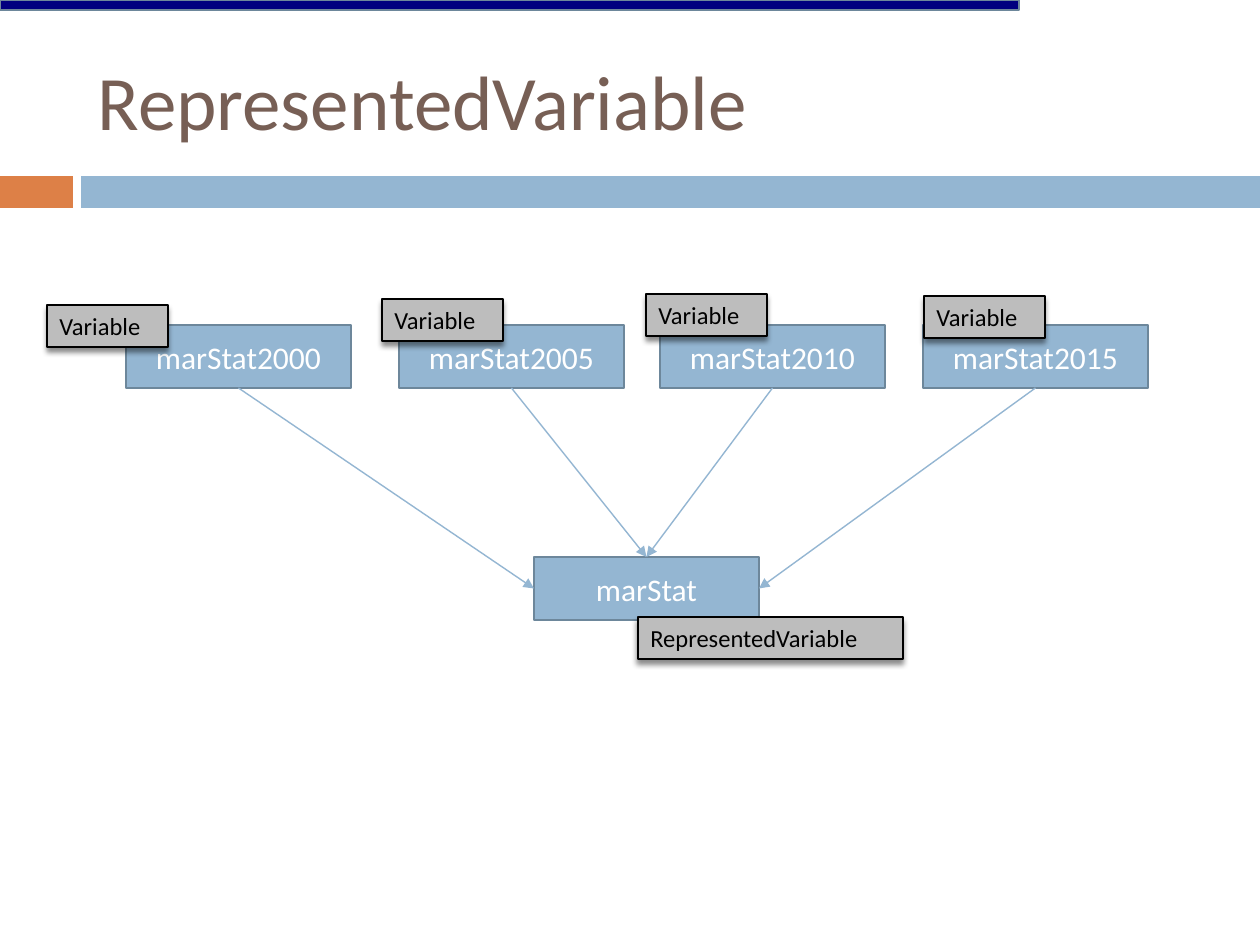
from lxml import etree
from pptx import Presentation
from pptx import util as u
from pptx.dml.color import RGBColor
from pptx.enum import shapes, text
from pptx.oxml import parse_xml
from pptx.oxml.ns import nsdecls, qn

PX = u.Inches(1) // 126
TOP, LEFT, BOTTOM, RIGHT = range(4)  # connection sites of a rectangle


def color(value):
    return RGBColor.from_string(value)


class Diagram:
    font = "Calibri"
    blue, edge, orange, navy = "94B6D2", "6D879B", "DD8047", "00007F"
    gray, black, white, brown = "BDBDBD", "000000", "FFFFFF", "775F55"

    def __init__(self, slide):
        self.slide = slide

    def set_text(self, shape, words, size, fill, align, anchor):
        frame = shape.text_frame
        frame.text = words
        frame.word_wrap = True
        frame.vertical_anchor = anchor
        paragraph = frame.paragraphs[0]
        paragraph.alignment = align
        paragraph.font.name = self.font
        paragraph.font.size = u.Pt(size)
        paragraph.font.color.rgb = color(fill)

    def title(self, words, left, top, width, height):
        shape = self.slide.shapes.title
        shape.left, shape.top = left * PX, top * PX
        shape.width, shape.height = width * PX, height * PX
        self.set_text(shape, words, 44, self.brown,
                      text.PP_ALIGN.LEFT, text.MSO_ANCHOR.MIDDLE)
        shape.text_frame.auto_size = text.MSO_AUTO_SIZE.NONE

    def bar(self, left, top, width, height, fill, line=None, weight=1.5):
        shape = self.slide.shapes.add_shape(
            shapes.MSO_SHAPE.RECTANGLE,
            left * PX, top * PX, width * PX, height * PX)
        shape.shadow.inherit = False
        shape.fill.solid()
        shape.fill.fore_color.rgb = color(fill)
        if line:
            shape.line.color.rgb = color(line)
            shape.line.width = u.Pt(weight)
        else:
            shape.line.fill.background()
        return shape

    def box(self, words, left, top):
        shape = self.bar(left, top, 225, 63, self.blue, self.edge)
        self.set_text(shape, words, 18, self.white,
                      text.PP_ALIGN.CENTER, text.MSO_ANCHOR.MIDDLE)
        return shape

    def label(self, words, left, top, width):
        shape = self.bar(left, top, width, 42, self.gray, self.black, 0.79)
        self.set_text(shape, words, 14, self.black,
                      text.PP_ALIGN.LEFT, text.MSO_ANCHOR.TOP)
        effects = shape._element.spPr.find(qn("a:effectLst"))
        effects.append(parse_xml(
            f'<a:outerShdw {nsdecls("a")} blurRad="{u.Pt(3)}" '
            f'dist="{u.Pt(2.4)}" dir="5400000" rotWithShape="0">'
            f'<a:srgbClr val="{self.black}"><a:alpha val="45000"/>'
            '</a:srgbClr></a:outerShdw>'))

    def arrow(self, start, end, site):
        connector = self.slide.shapes.add_connector(
            shapes.MSO_CONNECTOR.STRAIGHT, 0, 0, 0, 0)
        connector.begin_connect(start, BOTTOM)
        connector.end_connect(end, site)
        connector.line.color.rgb = color(self.blue)
        connector.line.width = u.Pt(0.79)
        line = connector.line._get_or_add_ln()
        etree.SubElement(line, qn("a:tailEnd"), type="triangle")
        etree.SubElement(connector._element.spPr, qn("a:effectLst"))


def main():
    presentation = Presentation()
    presentation.slide_width = u.Inches(10)
    presentation.slide_height = u.Inches(7.5)
    slide = presentation.slides.add_slide(presentation.slide_layouts[5])
    diagram = Diagram(slide)

    # Title and bands
    diagram.bar(0, 176, 73, 32, diagram.orange)
    diagram.bar(81, 176, 1179, 32, diagram.blue)
    diagram.title("RepresentedVariable", 85, 32, 1124, 136)

    # Yearly variables: year, box left, label left, label top, arrow target
    variables = [
        (2000, 126, 47, 305, LEFT),
        (2005, 399, 382, 299, TOP),
        (2010, 660, 646, 294, TOP),
        (2015, 923, 924, 296, RIGHT),
    ]
    boxes = [diagram.box(f"marStat{year}", left, 325)
             for year, left, *_ in variables]
    represented = diagram.box("marStat", 534, 557)

    # Arrows to the represented variable
    for box, (*_, site) in zip(boxes, variables):
        diagram.arrow(box, represented, site)

    # Type labels
    for _, _, left, top, _ in variables:
        diagram.label("Variable", left, top, 121)
    diagram.label("RepresentedVariable", 638, 617, 265)

    # Progress bar
    diagram.bar(0, 0, 1019, 10, diagram.navy, diagram.edge)

    presentation.save("out.pptx")


if __name__ == "__main__":
    main()
